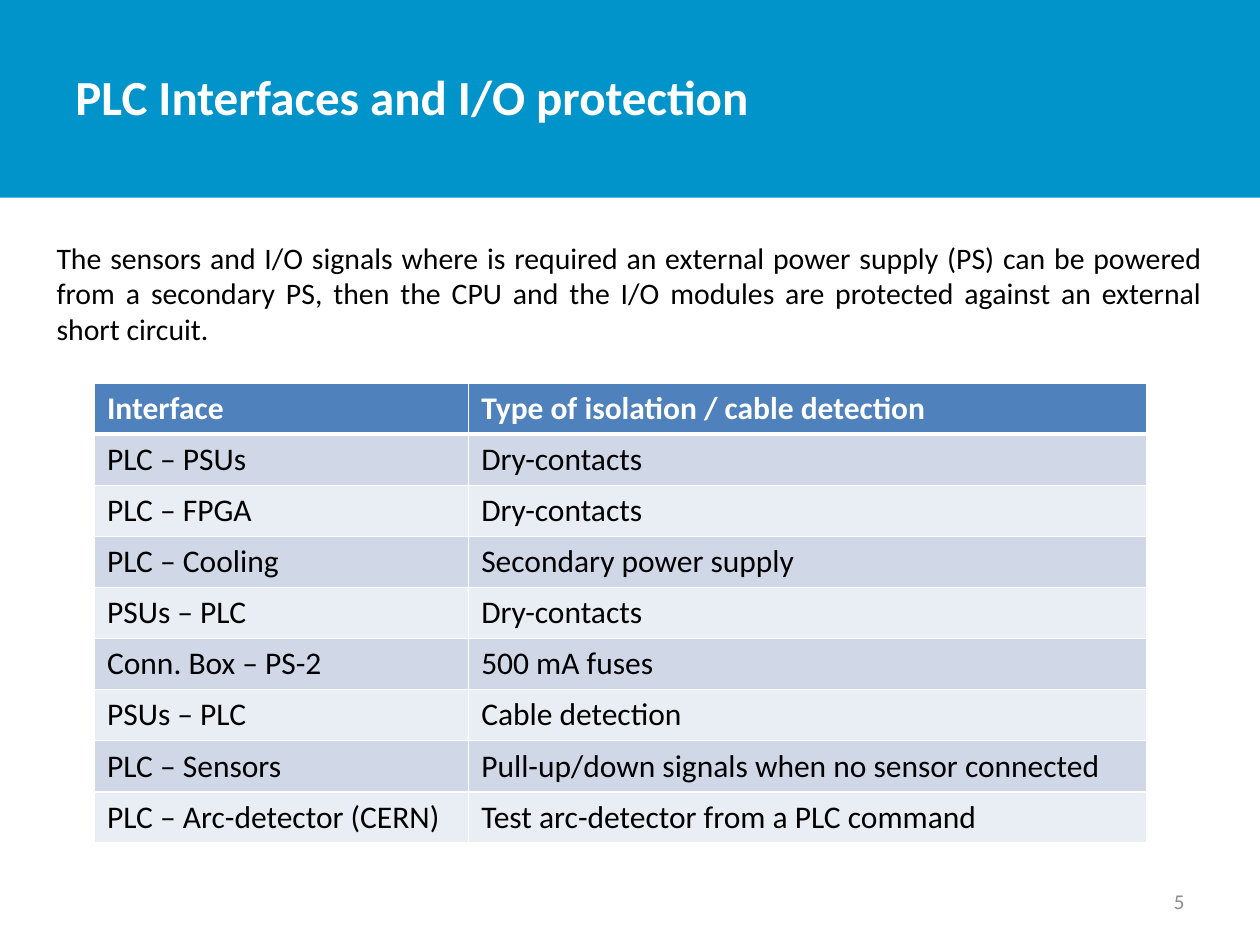
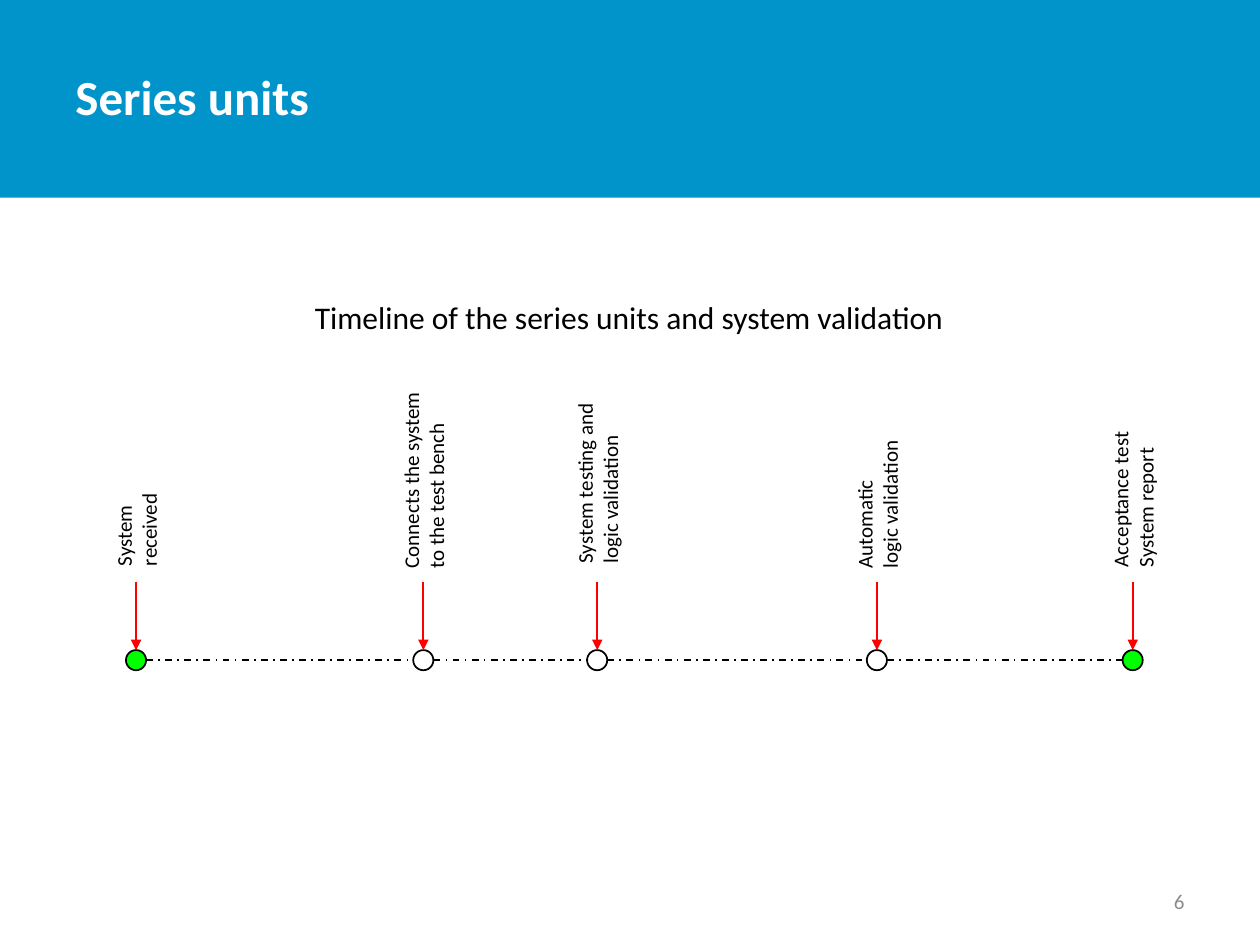
"""Build two slides: a PLC interface table and a series-unit validation timeline."""
import itertools

import lxml.etree
import pptx
import pptx.dml.color
import pptx.enum.dml
import pptx.enum.shapes
import pptx.enum.text
import pptx.oxml
import pptx.oxml.ns
import pptx.util

Inches = pptx.util.Inches
Pt = pptx.util.Pt
PP_ALIGN = pptx.enum.text.PP_ALIGN
ANCHOR = pptx.enum.text.MSO_ANCHOR
SHAPE = pptx.enum.shapes.MSO_SHAPE
qn = pptx.oxml.ns.qn

FONT = "Calibri"
BAND, WHITE, BLACK, GREY = "0094CA", "FFFFFF", "000000", "8C8C8C"
HEADER, ROW_DARK, ROW_LIGHT = "4F81BD", "D0D8E8", "E9EDF4"
RED, GREEN = "FF0000", "00FF00"


def rgb(color):
    return pptx.dml.color.RGBColor.from_string(color)


def add_text(s, box, text, size, color=BLACK, bold=False, align=PP_ALIGN.LEFT,
             anchor=ANCHOR.TOP, wrap=True):
    tb = s.shapes.add_textbox(*map(Inches, box))
    tf = tb.text_frame
    tf.text = text
    tf.word_wrap = wrap
    tf.vertical_anchor = anchor
    for p in tf.paragraphs:
        p.alignment = align
        for r in p.runs:
            r.font.name, r.font.size, r.font.bold = FONT, Pt(size), bold
            r.font.color.rgb = rgb(color)
    return tb


prs = pptx.Presentation()
prs.slide_width, prs.slide_height = Inches(10), Inches(7.5)

slides = []
for number, title in [(5, "PLC Interfaces and I/O protection"), (6, "Series units")]:
    s = prs.slides.add_slide(prs.slide_layouts[6])
    sp = s.shapes.add_shape(SHAPE.RECTANGLE, 0, 0, prs.slide_width, Inches(1.57))
    sp.shadow.inherit = False
    sp.fill.solid()
    sp.fill.fore_color.rgb = rgb(BAND)
    sp.line.fill.background()
    add_text(s, (7.17, 6.95, 2.33, 0.4), str(number), 12, GREY,
             align=PP_ALIGN.RIGHT, anchor=ANCHOR.MIDDLE)
    add_text(s, (0.5, 0.3, 7.81, 0.93), title, 28, WHITE, True, anchor=ANCHOR.MIDDLE)
    slides.append(s)
table_slide, timeline_slide = slides

add_text(table_slide, (0.35, 1.85, 9.29, 0.96),
         "The sensors and I/O signals where is required an external power supply (PS) "
         "can be powered from a secondary PS, then the CPU and the I/O modules are "
         "protected against an external short circuit.", 17, align=PP_ALIGN.JUSTIFY)

rows = [
    ("Interface", "Type of isolation / cable detection"),
    ("PLC – PSUs", "Dry-contacts"),
    ("PLC – FPGA", "Dry-contacts"),
    ("PLC – Cooling", "Secondary power supply"),
    ("PSUs – PLC", "Dry-contacts"),
    ("Conn. Box – PS-2", "500 mA fuses"),
    ("PSUs – PLC", "Cable detection"),
    ("PLC – Sensors", "Pull-up/down signals when no sensor connected"),
    ("PLC – Arc-detector (CERN)", "Test arc-detector from a PLC command"),
]
table = table_slide.shapes.add_table(len(rows), 2, Inches(0.75), Inches(3.04),
                                     Inches(8.35), Inches(3.65)).table
for column, width in zip(table.columns, (2.97, 5.38)):
    column.width = Inches(width)
for i, row in enumerate(rows):
    fill = HEADER if i == 0 else ROW_DARK if i % 2 else ROW_LIGHT
    for j, text in enumerate(row):
        cell = table.cell(i, j)
        cell.text = text
        font = cell.text_frame.paragraphs[0].runs[0].font
        font.name, font.size, font.bold = FONT, Pt(18), i == 0
        font.color.rgb = rgb(BLACK if i else WHITE)
        tcPr = cell._tc.get_or_add_tcPr()
        for side in "LRTB":
            thick = (i, side) in [(0, "B"), (1, "T")]
            ln = lxml.etree.SubElement(tcPr, qn(f"a:ln{side}"), w=str(Pt(3 if thick else 1)))
            solid = lxml.etree.SubElement(ln, qn("a:solidFill"))
            lxml.etree.SubElement(solid, qn("a:srgbClr"), val=WHITE)
        cell.fill.solid()
        cell.fill.fore_color.rgb = rgb(fill)

s = timeline_slide
add_text(s, (2.4, 2.32, 5.25, 0.4), "Timeline of the series units and system validation",
         18, wrap=False)

AXIS_Y, RADIUS, ARROW_TOP, LABEL_HEIGHT = 5.24, 0.08, 4.62, 0.5
steps = [
    (1.08, "System\nreceived", 0.91, 4.59, GREEN),
    (3.36, "Connects the system\nto the test bench", 1.65, 4.61, None),
    (4.74, "System testing and\nlogic validation", 1.53, 4.57, None),
    (6.96, "Automatic\nlogic validation", 1.23, 4.61, None),
    (8.99, "Acceptance test\nSystem report", 1.29, 4.6, GREEN),
]
lines = []
for x, label, length, label_end, fill in steps:
    sp = s.shapes.add_shape(SHAPE.OVAL, Inches(x - RADIUS), Inches(AXIS_Y - RADIUS),
                            Inches(2 * RADIUS), Inches(2 * RADIUS))
    sp.shadow.inherit = False
    sp.line.color.rgb = rgb(BLACK)
    sp.line.width = Pt(1)
    if fill:
        sp.fill.solid()
        sp.fill.fore_color.rgb = rgb(fill)
    else:
        sp.fill.background()
    tb = add_text(s, (x - length / 2, label_end - (length + LABEL_HEIGHT) / 2,
                      length, LABEL_HEIGHT), label, 12, wrap=False)
    tb.rotation = 270
    lines.append((x, ARROW_TOP, x, AXIS_Y - RADIUS, RED))
for left, right in itertools.pairwise(steps):
    lines.append((left[0] + RADIUS, AXIS_Y, right[0] - RADIUS, AXIS_Y, BLACK))

for *ends, color in lines:
    cxn = s.shapes.add_connector(pptx.enum.shapes.MSO_CONNECTOR.STRAIGHT, *map(Inches, ends))
    cxn.line.color.rgb = rgb(color)
    cxn.line.width = Pt(1)
    if color == RED:
        lxml.etree.SubElement(cxn.line._get_or_add_ln(), qn("a:tailEnd"), type="triangle")
    else:
        cxn.line.dash_style = pptx.enum.dml.MSO_LINE.DASH_DOT
    lxml.etree.SubElement(cxn._element.spPr, qn("a:effectLst"))

prs.save("out.pptx")
